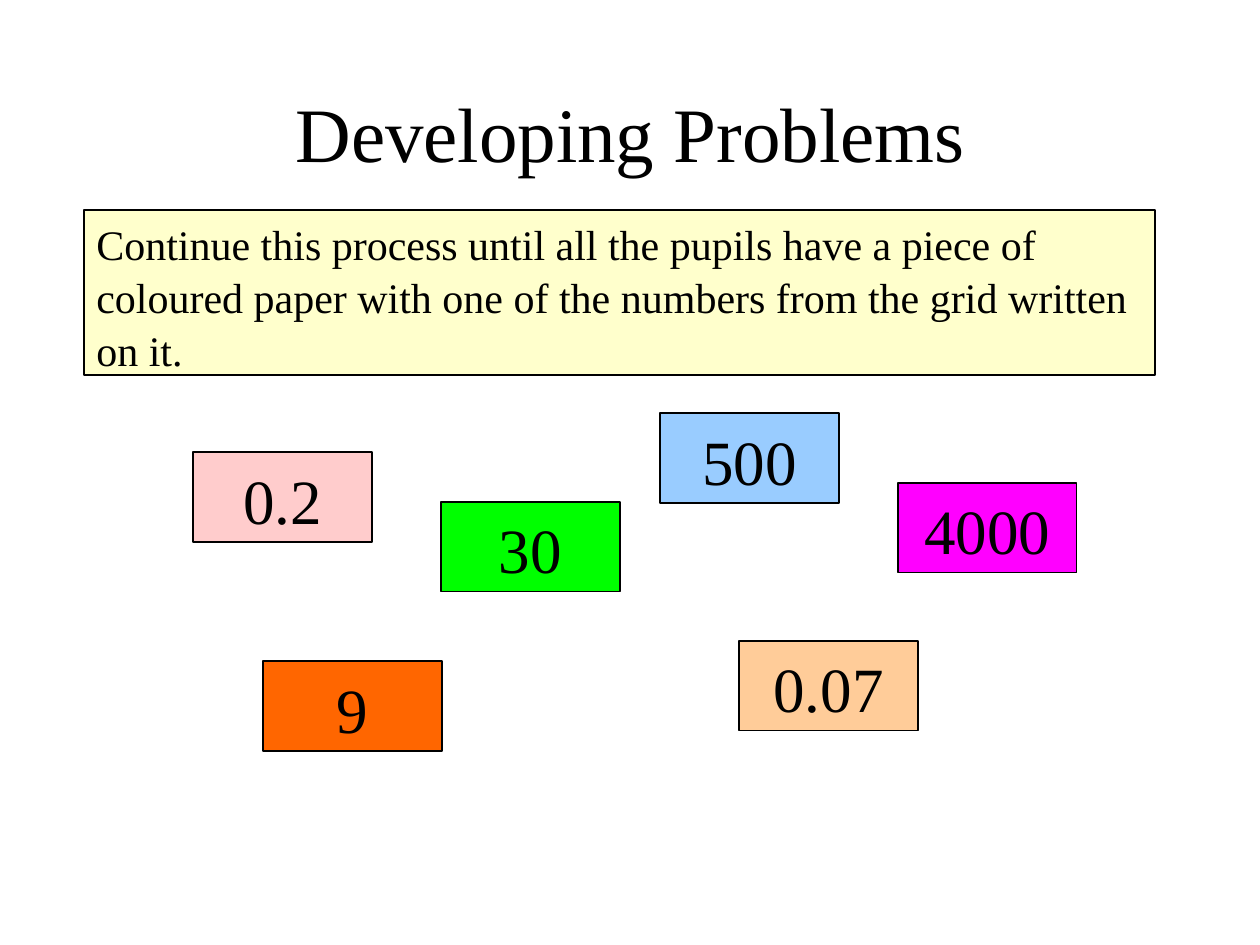
from dataclasses import dataclass
from typing import Optional

from pptx import Presentation
from pptx import util as u
from pptx.dml import color
from pptx.enum import shapes, text

PX = u.Inches(1) // 126
CARD_W, CARD_H = 179, 90
COLORS = {
    "ink": "000000",
    "cream": "FFFFCC",
    "green": "00FF00",
    "pink": "FFCCCC",
    "orange": "FF6600",
    "blue": "99CCFF",
    "peach": "FFCC99",
    "magenta": "FF00FF",
}


@dataclass
class Box:
    words: str
    x: int
    y: int
    w: int = CARD_W
    h: int = CARD_H
    fill: Optional[str] = None
    size: int = 36
    align: text.PP_ALIGN = text.PP_ALIGN.CENTER
    anchor: text.MSO_ANCHOR = text.MSO_ANCHOR.MIDDLE
    spacing: float = 1.05


BOXES = [
    Box("Developing Problems", 95, 53, 1071, 158, size=44, spacing=1.0),
    Box("Continue this process until all the pupils have a piece of coloured "
        "paper with one of the numbers from the grid written on it.",
        84, 210, 1071, 165, "cream", 24, text.PP_ALIGN.LEFT, text.MSO_ANCHOR.TOP),
    Box("30", 441, 502, fill="green"),
    Box("0.2", 193, 452, fill="pink"),
    Box("9", 263, 661, fill="orange"),
    Box("500", 660, 413, fill="blue"),
    Box("0.07", 739, 641, fill="peach"),
    Box("4000", 898, 483, fill="magenta"),
]


def rgb(name: str) -> color.RGBColor:
    return color.RGBColor.from_string(COLORS[name])


def apply(target: object, values: dict) -> None:
    for name, value in values.items():
        setattr(target, name, value)


def draw_box(s, box: Box) -> None:
    place = [v * PX for v in (box.x, box.y, box.w, box.h)]
    if box.fill:
        sp = s.shapes.add_shape(shapes.MSO_SHAPE.RECTANGLE, *place)
        sp.shadow.inherit = False
        sp.fill.solid()
        sp.fill.fore_color.rgb = rgb(box.fill)
        sp.line.color.rgb = rgb("ink")
        sp.line.width = u.Pt(0.75)
    else:
        sp = s.shapes.add_textbox(*place)
    tf = sp.text_frame
    apply(tf, {"word_wrap": True, "vertical_anchor": box.anchor})
    p = tf.paragraphs[0]
    apply(p, {"alignment": box.align, "line_spacing": box.spacing})
    r = p.add_run()
    r.text = box.words
    apply(r.font, {"name": "Times New Roman", "size": u.Pt(box.size)})
    r.font.color.rgb = rgb("ink")


def main() -> None:
    prs = Presentation()
    apply(prs, {"slide_width": u.Inches(10), "slide_height": u.Inches(7.5)})
    s = prs.slides.add_slide(prs.slide_layouts[6])
    for box in BOXES:
        draw_box(s, box)
    prs.save("out.pptx")


if __name__ == "__main__":
    main()
